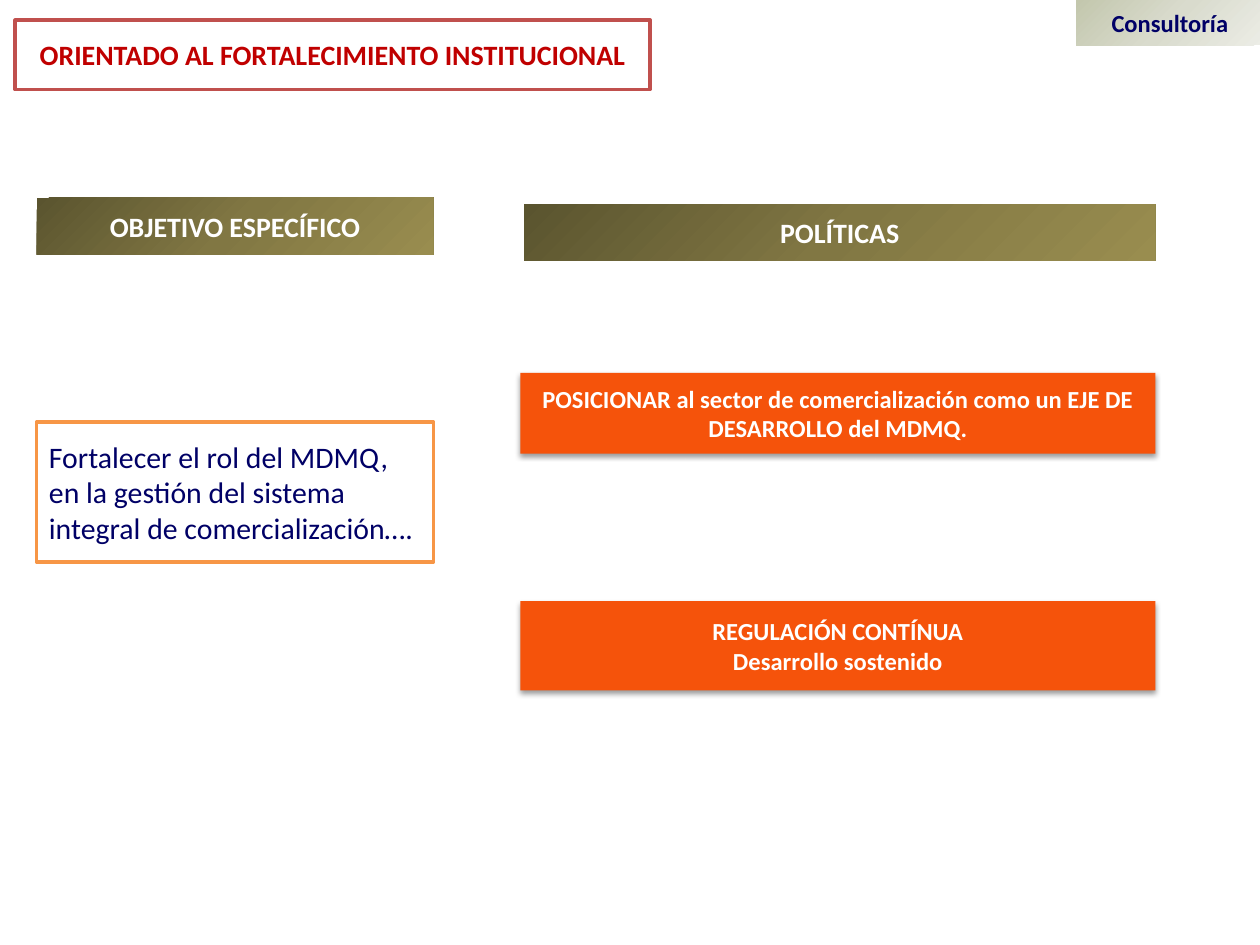
from lxml import etree
from pptx import Presentation
from pptx import util as u
from pptx.dml.color import RGBColor
from pptx.enum import shapes, text
from pptx.oxml import ns

COLORS = {
    "white": "FFFFFF", "navy": "000066", "red": "C00000", "brick": "C0504D",
    "amber": "F79646", "orange": "F5530B", "black": "000000",
}
OLIVE = ["5A542F", "817743", "998D4F"]
SAGE = ["C3C7AD", "D9DBCD", "ECEDE6"]


def add(parent, tag, **attrs):
    """Append a DrawingML element to parent."""
    el = etree.SubElement(parent, ns.qn(tag))
    for name, value in attrs.items():
        el.set(name, str(value))
    return el


def set_gradient(sp, stops, radial):
    """Replace the empty fill of a shape by a three-stop gradient."""
    sp.fill.background()
    old = sp._element.spPr.find(ns.qn("a:noFill"))
    grad = etree.Element(ns.qn("a:gradFill"), rotWithShape="1")
    gs_list = add(grad, "a:gsLst")
    for i, color in enumerate(stops):
        add(add(gs_list, "a:gs", pos=i * 50000), "a:srgbClr", val=color)
    if radial:
        add(add(grad, "a:path", path="circle"), "a:fillToRect", r=100000, b=100000)
    else:
        add(grad, "a:lin", ang=45 * 60000, scaled=0)
    old.getparent().replace(old, grad)


prs = Presentation()
prs.slide_width, prs.slide_height = u.Inches(10), u.Inches(7.5)
s = prs.slides.add_slide(prs.slide_layouts[6])

# Formats by kind of box
header = {"gradient": OLIVE, "size": 16, "color": "white", "bold": True}
policy = {"fill": "orange", "size": 14, "color": "white", "bold": True, "shadow": True}
title = {"fill": "white", "line": "brick", "size": 16, "color": "red", "bold": True}
goal = {"fill": "white", "line": "amber", "size": 17, "color": "navy", "bold": False,
        "align": text.PP_ALIGN.LEFT}
tag = {"gradient": SAGE, "radial": True, "size": 14, "color": "navy", "bold": True}

# Position, format and paragraphs of each box
boxes = [
    ((0.29, 1.57, 3.15, 0.45), header, ["OBJETIVO ESPECÍFICO"]),
    ((0.29, 3.35, 3.15, 1.11), goal,
     ["Fortalecer el rol del MDMQ, en la gestión del sistema integral de comercialización…."]),
    ((0.12, 0.16, 5.04, 0.55), title, ["ORIENTADO AL FORTALECIMIENTO INSTITUCIONAL"]),
    ((4.16, 1.62, 5.01, 0.45), header, ["POLÍTICAS"]),
    ((4.13, 2.96, 5.04, 0.64), policy,
     ["POSICIONAR al sector de comercialización como un EJE DE DESARROLLO del MDMQ."]),
    ((4.13, 4.77, 5.04, 0.71), policy, ["REGULACIÓN CONTÍNUA", "Desarrollo sostenido"]),
    ((8.54, 0, 1.49, 0.36), tag, ["Consultoría"]),
]

for place, fmt, lines in boxes:
    sp = s.shapes.add_shape(shapes.MSO_SHAPE.RECTANGLE, *map(u.Inches, place))

    # Fill and outline
    if "gradient" in fmt:
        set_gradient(sp, fmt["gradient"], fmt.get("radial", False))
    else:
        sp.fill.solid()
        sp.fill.fore_color.rgb = RGBColor.from_string(COLORS[fmt["fill"]])
    if "line" in fmt:
        sp.line.color.rgb = RGBColor.from_string(COLORS[fmt["line"]])
        sp.line.width = u.Pt(2)
    else:
        sp.line.fill.background()

    # Shadow
    sp.shadow.inherit = False
    if fmt.get("shadow"):
        effects = sp._element.spPr.find(ns.qn("a:effectLst"))
        shadow = add(effects, "a:outerShdw", blurRad=u.Pt(3.1), dist=u.Pt(1.6),
                     dir=90 * 60000, rotWithShape=0)
        add(add(shadow, "a:srgbClr", val=COLORS["black"]), "a:alpha", val=38000)

    # Text
    tf = sp.text_frame
    tf.word_wrap = True
    tf.vertical_anchor = text.MSO_ANCHOR.MIDDLE
    for i, line in enumerate(lines):
        p = tf.add_paragraph() if i else tf.paragraphs[0]
        p.alignment = fmt.get("align", text.PP_ALIGN.CENTER)
        r = p.add_run()
        r.text = line
        font = {"name": "Calibri", "size": u.Pt(fmt["size"]), "bold": fmt["bold"]}
        for name, value in font.items():
            setattr(r.font, name, value)
        r.font.color.rgb = RGBColor.from_string(COLORS[fmt["color"]])

prs.save("out.pptx")
